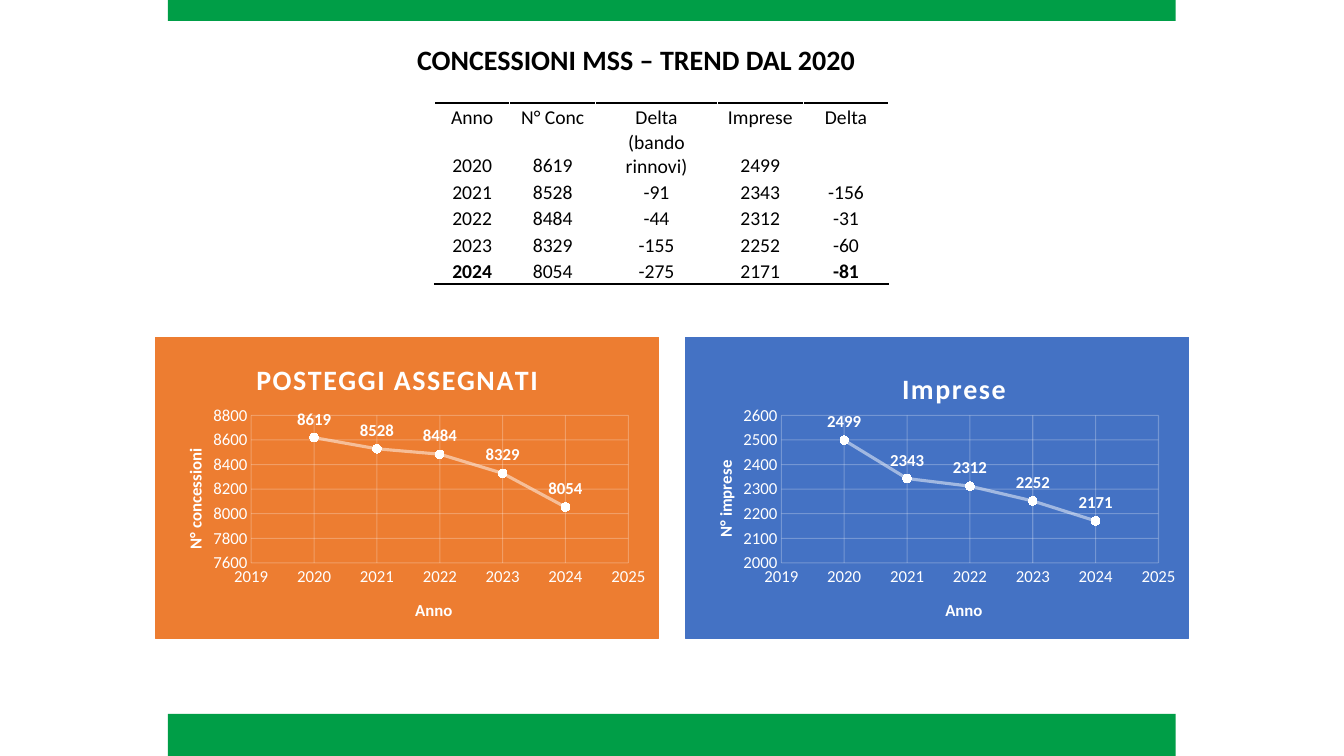
"""Build the slide on the trend of MSS concessions since 2020."""
from dataclasses import dataclass
from typing import Any

import lxml.etree
import pptx
import pptx.chart.data
import pptx.chart.datalabel
import pptx.dml.color
import pptx.enum.chart
import pptx.enum.shapes
import pptx.enum.text
import pptx.oxml
import pptx.oxml.ns
import pptx.util

Cm = pptx.util.Cm
Pt = pptx.util.Pt
RGB = pptx.dml.color.RGBColor.from_string
qn = pptx.oxml.ns.qn


@dataclass(frozen=True)
class Theme:
    font: str = "Calibri"
    green: str = "009E47"
    orange: str = "ED7D31"
    blue: str = "4472C4"
    black: str = "000000"
    white: str = "FFFFFF"
    title: float = 20
    cell: float = 14
    label: float = 12


@dataclass(frozen=True)
class Bar:
    top: float
    height: float


@dataclass(frozen=True)
class Trend:
    left: float
    fill: str
    series: str
    title: str
    title_at: tuple[float, float]
    y_title: str
    y_title_at: tuple[float, float]
    values: list[int]
    y_scale: tuple[int, int, int]


THEME = Theme()
YEARS = [2020, 2021, 2022, 2023, 2024]
CONCESSIONS = [8619, 8528, 8484, 8329, 8054]
FIRMS = [2499, 2343, 2312, 2252, 2171]
BARS = [Bar(0, 0.53), Bar(17.99, 1.06)]
COLUMNS = [1.9, 2.16, 3.07, 2.16, 2.16]
HEADINGS = ["Anno", "N° Conc", "Delta", "Imprese", "Delta"]
BOLD_CELLS = {"2024", "-81"}
TRENDS = [
    Trend(3.91, THEME.orange, "Posteggi", "POSTEGGI ASSEGNATI", (0.19, 0.06),
          "N° concessioni", (0.05, 0.36), CONCESSIONS, (7600, 8800, 200)),
    Trend(17.27, THEME.blue, "Imprese", "Imprese", (0.42, 0.09),
          "N° imprese", (0.05, 0.4), FIRMS, (2000, 2600, 100)),
]


def apply(target: Any, values: dict[str, Any]) -> None:
    """Set each named attribute on the target."""
    for name, value in values.items():
        setattr(target, name, value)


def style_font(font: Any, size: float, color: str, bold: bool = False) -> None:
    """Give a font the theme face with a size, colour and weight."""
    apply(font, {"name": THEME.font, "size": Pt(size), "bold": bold})
    font.color.rgb = RGB(color)


def style_line(line: Any, width: float, opacity: int) -> None:
    """Make a white line with a width and an opacity in percent."""
    line.color.rgb = RGB(THEME.white)
    line.width = Pt(width)
    color = line._get_or_add_ln().find(".//" + qn("a:srgbClr"))
    lxml.etree.SubElement(color, qn("a:alpha"), val=str(opacity * 1000))


def set_layout(parent: Any, index: int, box: dict[str, float]) -> None:
    """Place a chart part by fractions of the chart area."""
    old = parent.find(qn("c:layout"))
    if old is not None:
        parent.remove(old)
    layout = lxml.etree.Element(qn("c:layout"))
    manual = lxml.etree.SubElement(layout, qn("c:manualLayout"))
    if "w" in box:
        lxml.etree.SubElement(manual, qn("c:layoutTarget"), val="inner")
    for mode in ("xMode", "yMode"):
        lxml.etree.SubElement(manual, qn("c:" + mode), val="edge")
    for name, value in box.items():
        lxml.etree.SubElement(manual, qn("c:" + name), val=str(value))
    parent.insert(index, layout)


def set_title(title: Any, text: str, size: float, at: tuple[float, float], spacing: int = 0) -> None:
    """Write and place the title of a chart or an axis."""
    p = title.text_frame.paragraphs[0]
    r = p.add_run()
    r.text = text
    style_font(r.font, size, THEME.white, True)
    r._r.get_or_add_rPr().set("spc", str(spacing))
    set_layout(title._element, 1, {"x": at[0], "y": at[1]})


def style_axis(axis: Any, scale: tuple[int, int, int], text: str, at: tuple[float, float]) -> None:
    """Format an axis with its scale, grid, labels and title."""
    none = pptx.enum.chart.XL_TICK_MARK.NONE
    low, high, step = scale
    apply(axis, {"minimum_scale": low, "maximum_scale": high, "major_unit": step,
                 "major_tick_mark": none, "minor_tick_mark": none,
                 "has_major_gridlines": True, "has_title": True})
    style_line(axis.major_gridlines.format.line, 0.75, 25)
    axis.format.line.fill.background()
    apply(axis.tick_labels, {"number_format": "0", "number_format_is_linked": False})
    style_font(axis.tick_labels.font, THEME.label, THEME.white)
    set_title(axis.axis_title, text, THEME.label, at)


def fill_chart(chart: Any, color: str) -> None:
    """Fill and outline the chart area with square corners."""
    body = chart._chartSpace.find(qn("c:chart"))
    corners = lxml.etree.Element(qn("c:roundedCorners"), val="0")
    body.addprevious(corners)
    props = lxml.etree.Element(qn("c:spPr"))
    line = lxml.etree.Element(qn("a:ln"), w=str(Pt(0.75)))
    for parent in (props, line):
        solid = lxml.etree.SubElement(parent, qn("a:solidFill"))
        lxml.etree.SubElement(solid, qn("a:srgbClr"), val=color)
    props.append(line)
    body.addnext(props)


def add_trend(s: Any, trend: Trend) -> None:
    """Add a scatter chart of one yearly trend."""
    data = pptx.chart.data.XyChartData()
    points = data.add_series(trend.series)
    for year, value in zip(YEARS, trend.values):
        points.add_data_point(year, value)
    kind = pptx.enum.chart.XL_CHART_TYPE.XY_SCATTER_LINES
    chart = s.shapes.add_chart(kind, Cm(trend.left), Cm(8.48), Cm(12.7), Cm(7.62), data).chart
    style_font(chart.font, 10, THEME.black)
    apply(chart, {"has_legend": False, "has_title": True})
    fill_chart(chart, trend.fill)
    set_title(chart.chart_title, trend.title, THEME.title, trend.title_at, 100)
    set_layout(chart._chartSpace.find(".//" + qn("c:plotArea")), 0,
               {"x": 0.19, "y": 0.26, "w": 0.75, "h": 0.49})
    style_axis(chart.category_axis, (2019, 2025, 1), "Anno", (0.51, 0.86))
    style_axis(chart.value_axis, trend.y_scale, trend.y_title, trend.y_title_at)

    plot = chart.plots[0]
    plot.vary_by_categories = False
    series = plot.series[0]
    style_line(series.format.line, 2.25, 50)
    apply(series.marker, {"style": pptx.enum.chart.XL_MARKER_STYLE.CIRCLE, "size": 6})
    series.marker.format.fill.solid()
    series.marker.format.fill.fore_color.rgb = RGB(THEME.white)
    series.marker.format.line.fill.background()
    labels = pptx.chart.datalabel.DataLabels(series._element.get_or_add_dLbls())
    style_font(labels.font, THEME.label, THEME.white, True)
    apply(labels, {"show_value": True, "position": pptx.enum.chart.XL_LABEL_POSITION.ABOVE})


def add_bar(s: Any, bar: Bar) -> None:
    """Add a green band."""
    sp = s.shapes.add_shape(pptx.enum.shapes.MSO_SHAPE.RECTANGLE,
                            Cm(4.23), Cm(bar.top), Cm(25.4), Cm(bar.height))
    sp.shadow.inherit = False
    sp.fill.solid()
    sp.fill.fore_color.rgb = RGB(THEME.green)
    sp.line.fill.background()


def add_heading(s: Any) -> None:
    """Add the slide heading."""
    tf = s.shapes.add_textbox(Cm(10.26), Cm(0.53), Cm(12.14), Cm(1.55)).text_frame
    apply(tf, {"word_wrap": True, "auto_size": pptx.enum.text.MSO_AUTO_SIZE.SHAPE_TO_FIT_TEXT})
    p = tf.paragraphs[0]
    p.line_spacing = 1.5
    r = p.add_run()
    r.text = "CONCESSIONI MSS – TREND DAL 2020"
    style_font(r.font, THEME.title, THEME.black, True)


def add_border(cell: Any, side: str) -> None:
    """Draw a black rule on one side of a cell."""
    line = lxml.etree.Element(qn("a:" + side), w=str(Pt(2)))
    solid = lxml.etree.SubElement(line, qn("a:solidFill"))
    lxml.etree.SubElement(solid, qn("a:srgbClr"), val=THEME.black)
    cell._tc.get_or_add_tcPr().insert(0, line)


def add_figures(s: Any) -> None:
    """Add the table of yearly figures with their changes."""
    deltas = [[str(b - a) for a, b in zip(v, v[1:])] for v in (CONCESSIONS, FIRMS)]
    columns = [YEARS, CONCESSIONS, ["(bando rinnovi)", *deltas[0]], FIRMS, ["", *deltas[1]]]
    rows = [HEADINGS, *zip(*columns)]
    table = s.shapes.add_table(len(rows), len(COLUMNS), Cm(10.95), Cm(2.59),
                               Cm(sum(COLUMNS)), Cm(0.67 * len(rows))).table
    apply(table, {"first_row": False, "horz_banding": False})
    for column, width in zip(table.columns, COLUMNS):
        column.width = Cm(width)
    for i, row in enumerate(rows):
        table.rows[i].height = Cm(1.22 if i == 1 else 0.67)
        for j, value in enumerate(row):
            cell = table.cell(i, j)
            apply(cell, {"margin_left": Cm(0.03), "margin_right": Cm(0.03),
                         "margin_top": Cm(0.03), "margin_bottom": 0,
                         "vertical_anchor": pptx.enum.text.MSO_ANCHOR.BOTTOM})
            cell.fill.solid()
            cell.fill.fore_color.rgb = RGB(THEME.white)
            if i in (0, len(rows) - 1):
                add_border(cell, "lnB" if i else "lnT")
            if value:
                p = cell.text_frame.paragraphs[0]
                p.alignment = pptx.enum.text.PP_ALIGN.CENTER
                r = p.add_run()
                r.text = str(value)
                style_font(r.font, THEME.cell, THEME.black, r.text in BOLD_CELLS)


def main() -> None:
    """Build and save the presentation."""
    prs = pptx.Presentation()
    apply(prs, {"slide_width": Cm(33.87), "slide_height": Cm(19.05)})
    s = prs.slides.add_slide(prs.slide_layouts[6])
    for bar in BARS:
        add_bar(s, bar)
    add_heading(s)
    add_figures(s)
    for trend in TRENDS:
        add_trend(s, trend)
    prs.save("out.pptx")


if __name__ == "__main__":
    main()
